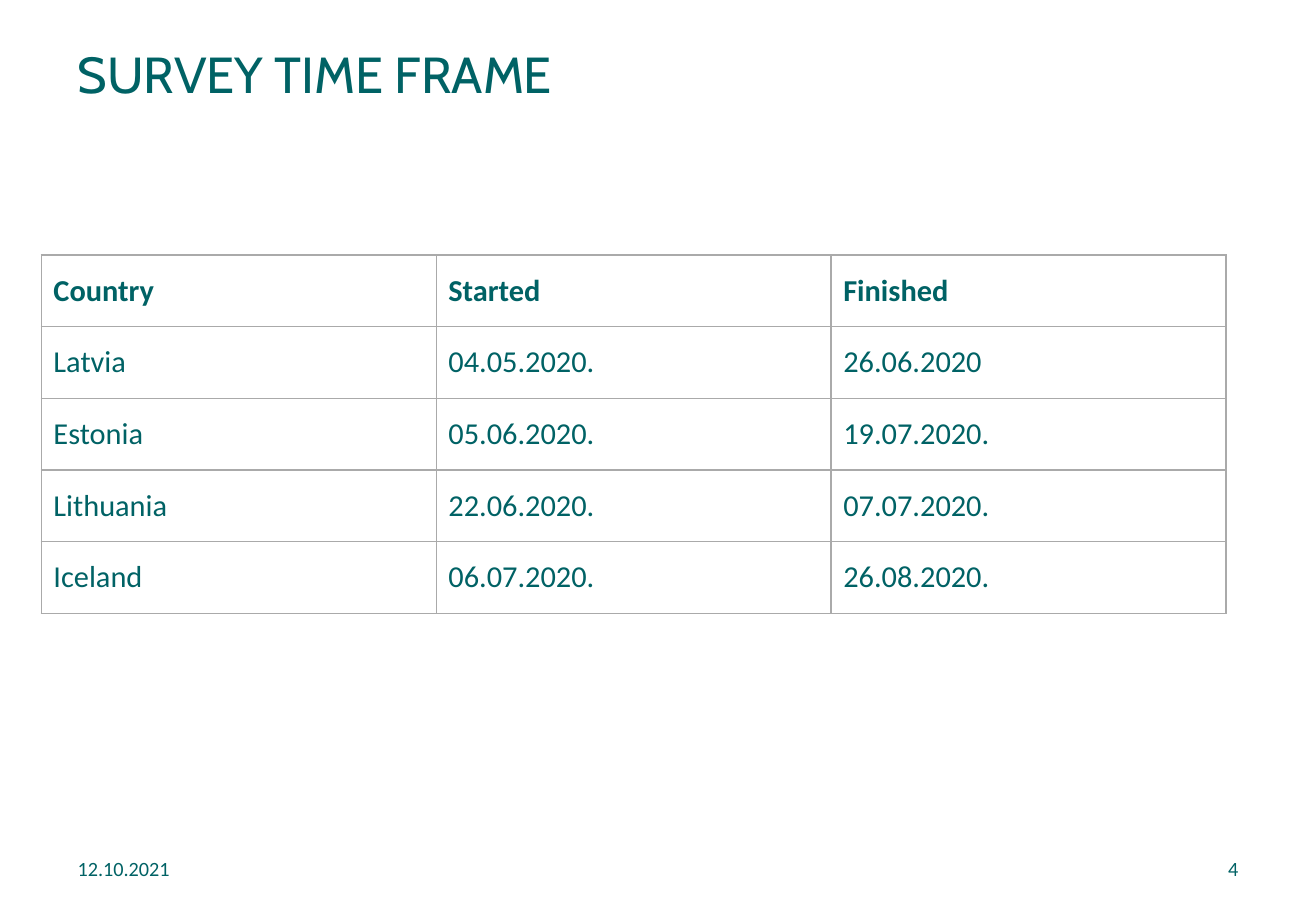
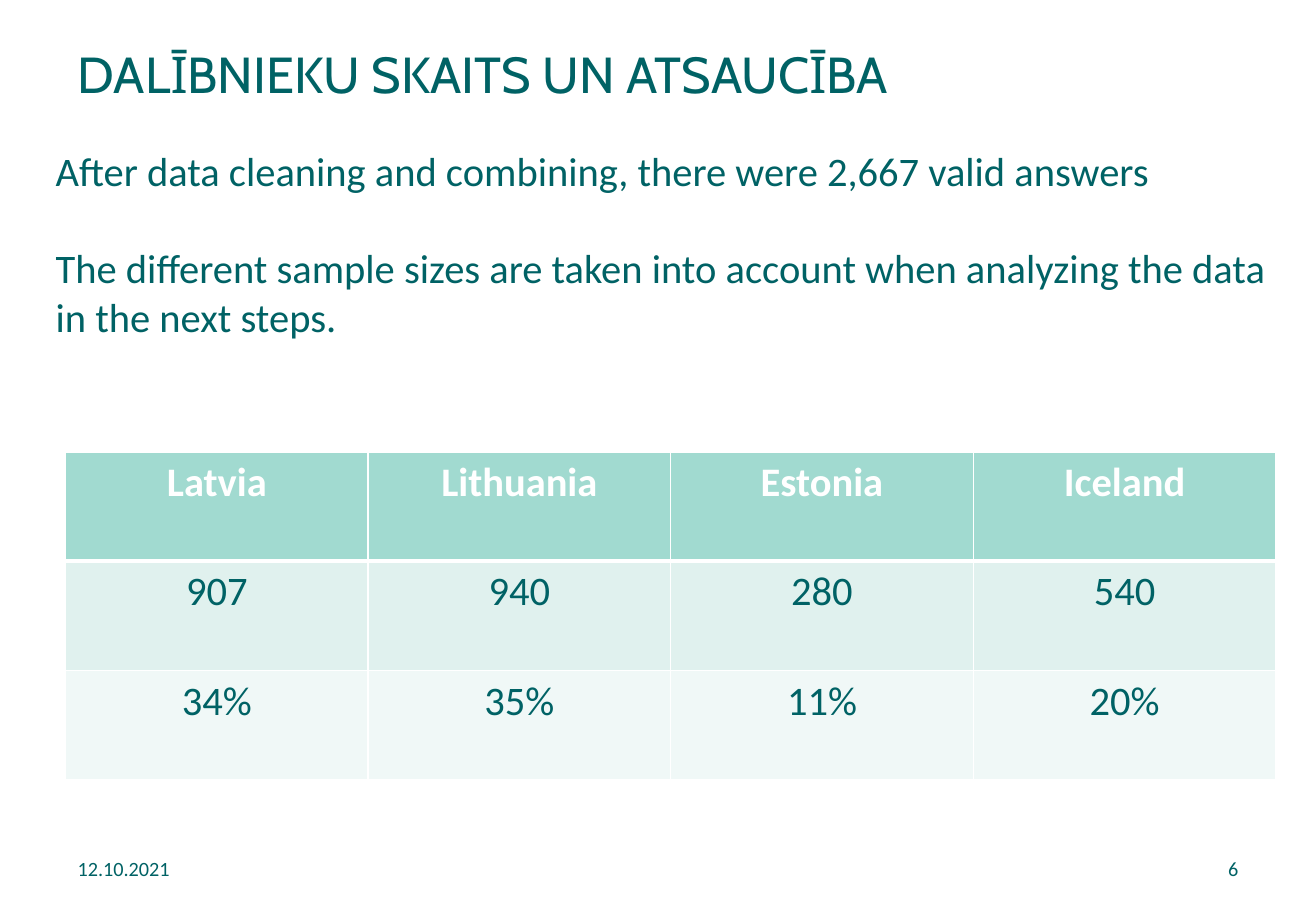
import pptx
import pptx.dml.color
import pptx.enum.text
import pptx.util
from lxml import etree
from pptx.oxml.ns import qn

Inches = pptx.util.Inches
Pt = pptx.util.Pt
ALIGN = pptx.enum.text.PP_ALIGN
ANCHOR = pptx.enum.text.MSO_ANCHOR

COLORS = {
    "text": "006265",
    "white": "FFFFFF",
    "grid": "AAAAAA",
    "header": "A1DAD0",
    "band_dark": "E0F1EE",
    "band_light": "F0F8F7",
}
TITLE_FONT = "Cabin"
BODY_FONT = "Calibri"
TITLE_LAYOUT = 5
MARGIN = 0.54
CONTENT_WIDTH = 9.75
FOOTER_TOP, FOOTER_WIDTH, FOOTER_HEIGHT = 6.95, 2.53, 0.4


def rgb(name):
    return pptx.dml.color.RGBColor.from_string(COLORS[name])


class Deck:
    """Holds the presentation, its style and the slide being filled."""

    def __init__(self):
        self.presentation = pptx.Presentation()
        self.presentation.slide_width = Inches(10.83)
        self.presentation.slide_height = Inches(7.5)
        self.slide = None

    def style(self, paragraph, size, color="text", font=BODY_FONT, bold=False,
              align=ALIGN.LEFT):
        paragraph.alignment = align
        paragraph.font.name = font
        paragraph.font.size = Pt(size)
        paragraph.font.bold = bold
        paragraph.font.color.rgb = rgb(color)

    def add_slide(self, title, date, number):
        layout = self.presentation.slide_layouts[TITLE_LAYOUT]
        self.slide = self.presentation.slides.add_slide(layout)
        self.title(title)
        self.text([date], MARGIN, FOOTER_TOP, FOOTER_WIDTH, FOOTER_HEIGHT, 12,
                  anchor=ANCHOR.MIDDLE)
        self.text([number], MARGIN + CONTENT_WIDTH - FOOTER_WIDTH, FOOTER_TOP,
                  FOOTER_WIDTH, FOOTER_HEIGHT, 12, anchor=ANCHOR.MIDDLE,
                  align=ALIGN.RIGHT)

    def title(self, text):
        shape = self.slide.shapes.title
        shape.left, shape.top = Inches(MARGIN), Inches(0.3)
        shape.width, shape.height = Inches(CONTENT_WIDTH), Inches(0.85)
        frame = shape.text_frame
        frame.text = text
        frame.auto_size = pptx.enum.text.MSO_AUTO_SIZE.NONE
        frame.vertical_anchor = ANCHOR.TOP
        self.style(frame.paragraphs[0], 30, font=TITLE_FONT)

    def text(self, lines, left, top, width, height, size, anchor=ANCHOR.TOP,
             align=ALIGN.LEFT, gap=0):
        """Add a text box; gap is the space in points between paragraphs."""
        box = self.slide.shapes.add_textbox(
            Inches(left), Inches(top), Inches(width), Inches(height))
        frame = box.text_frame
        frame.word_wrap = True
        frame.vertical_anchor = anchor
        frame.text = "\n".join(lines)
        for index, paragraph in enumerate(frame.paragraphs):
            self.style(paragraph, size, align=align)
            if index and gap:
                paragraph.space_before = Pt(gap)

    def borders(self, cell, color, top, bottom):
        """Draw 1 pt side borders, and top and bottom ones of given widths."""
        properties = cell._tc.get_or_add_tcPr()
        for side, width in (("L", 1), ("R", 1), ("T", top), ("B", bottom)):
            line = etree.SubElement(properties, qn("a:ln" + side), w=str(Pt(width)))
            fill = etree.SubElement(line, qn("a:solidFill"))
            etree.SubElement(fill, qn("a:srgbClr"), val=COLORS[color])

    def table(self, rows, left, top, column_width, row_height, size, fills,
              border, rules, header_color="text", align=ALIGN.LEFT,
              anchor=ANCHOR.TOP):
        """Add a table; rules lists its horizontal line widths from top down."""
        count = len(rows[0])
        table = self.slide.shapes.add_table(
            len(rows), count, Inches(left), Inches(top),
            Inches(column_width * count), Inches(row_height * len(rows))).table
        table.first_row = table.horz_banding = False
        for row_index, values in enumerate(rows):
            is_header = row_index == 0
            for column_index, value in enumerate(values):
                cell = table.cell(row_index, column_index)
                cell.text = value
                cell.vertical_anchor = anchor
                self.borders(cell, border, rules[row_index], rules[row_index + 1])
                cell.fill.solid()
                cell.fill.fore_color.rgb = rgb(fills[row_index])
                self.style(cell.text_frame.paragraphs[0], size, bold=is_header,
                           color=header_color if is_header else "text",
                           align=align)


def main():
    deck = Deck()
    date = "12.10.2021"

    deck.add_slide("SURVEY TIME FRAME", date, "4")
    periods = [
        ["Country", "Started", "Finished"],
        ["Latvia", "04.05.2020.", "26.06.2020"],
        ["Estonia", "05.06.2020.", "19.07.2020."],
        ["Lithuania", "22.06.2020.", "07.07.2020."],
        ["Iceland", "06.07.2020.", "26.08.2020."],
    ]
    deck.table(periods, 0.34, 2.1, 3.25, 0.59, 18,
               fills=["white"] * len(periods), border="grid",
               rules=[1] * len(periods) + [0.5], anchor=ANCHOR.MIDDLE)

    deck.add_slide("DALĪBNIEKU SKAITS UN ATSAUCĪBA", date, "6")
    answers = [
        ["Latvia", "Lithuania", "Estonia", "Iceland"],
        ["907", "940", "280", "540"],
        ["34%", "35%", "11%", "20%"],
    ]
    deck.table(answers, MARGIN, 3.72, 2.49, 0.9, 24,
               fills=["header", "band_dark", "band_light"], border="white",
               rules=[1, 3, 1, 1], header_color="white", align=ALIGN.CENTER)
    deck.text(
        ["After data cleaning and combining, there were 2,667 valid answers",
         "The different sample sizes are taken into account when analyzing "
         "the data in the next steps."],
        0.36, 1.15, 10.32, 1.72, 24, gap=29)

    deck.presentation.save("out.pptx")


if __name__ == "__main__":
    main()
